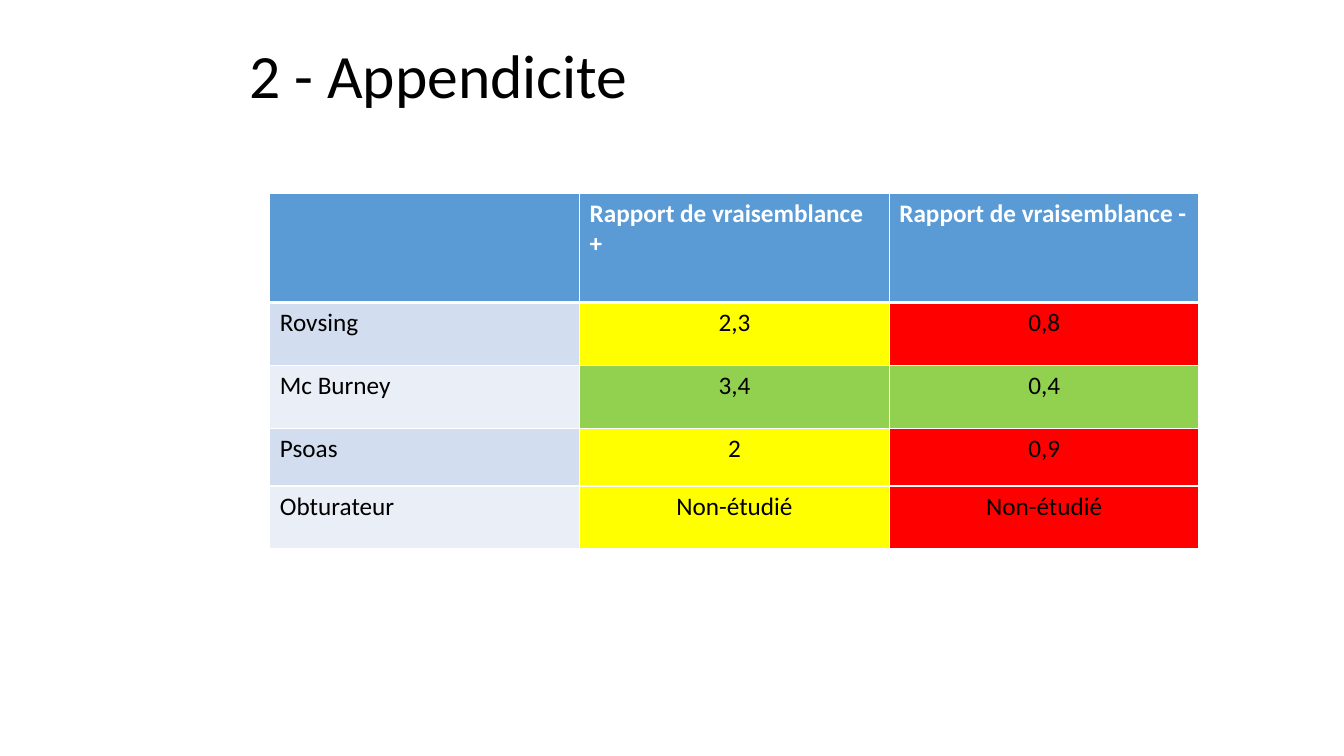
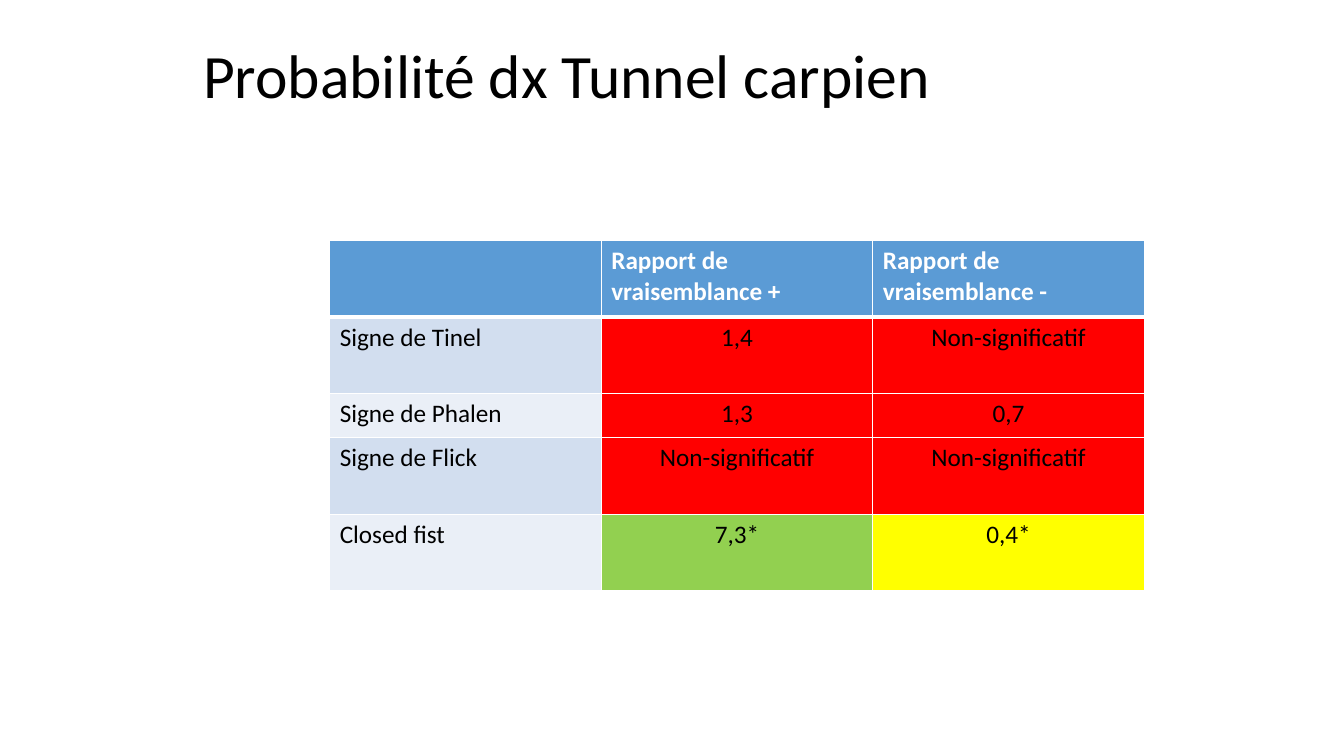
from dataclasses import dataclass

from lxml import etree
from pptx import Presentation
from pptx import util as u
from pptx.dml.color import RGBColor
from pptx.enum import text
from pptx.oxml.ns import qn

EMU_PER_PX = 9525
SLIDE_SIZE = (1280, 720)
TITLE_TOP, TITLE_RIGHT, TITLE_HEIGHT = 38, 1191, 139
FONT = "Calibri"
BLACK, WHITE = "000000", "FFFFFF"
HEADER_BLUE = "5B9BD5"
BANDS = ("D2DEEF", "EAEFF7")
GREEN, YELLOW, RED = "92D050", "FFFF00", "FF0000"
HEADINGS = ("", "Rapport de vraisemblance +", "Rapport de vraisemblance -")


@dataclass(frozen=True)
class Ratio:
    value: str
    color: str


@dataclass(frozen=True)
class Sign:
    name: str
    positive: Ratio
    negative: Ratio
    height: int


@dataclass(frozen=True)
class Topic:
    title: str
    title_left: int
    table_left: int
    table_top: int
    table_width: int
    header_height: int
    signs: tuple[Sign, ...]


TOPICS = (
    Topic("2 - Appendicite", 228, 257, 184, 885, 104, (
        Sign("Rovsing", Ratio("2,3", YELLOW), Ratio("0,8", RED), 60),
        Sign("Mc Burney", Ratio("3,4", GREEN), Ratio("0,4", GREEN), 60),
        Sign("Psoas", Ratio("2", YELLOW), Ratio("0,9", RED), 55),
        Sign("Obturateur", Ratio("Non-étudié", YELLOW), Ratio("Non-étudié", RED), 60),
    )),
    Topic("Probabilité dx Tunnel carpien", 184, 314, 229, 776, 73, (
        Sign("Signe de Tinel", Ratio("1,4", RED), Ratio("Non-significatif", RED), 73),
        Sign("Signe de Phalen", Ratio("1,3", RED), Ratio("0,7", RED), 42),
        Sign("Signe de Flick", Ratio("Non-significatif", RED),
             Ratio("Non-significatif", RED), 73),
        Sign("Closed fist", Ratio("7,3*", GREEN), Ratio("0,4*", YELLOW), 73),
    )),
)


def px(length: float) -> u.Emu:
    return u.Emu(round(length * EMU_PER_PX))


def rgb(color: str) -> RGBColor:
    return RGBColor.from_string(color)


def add_run(paragraph, words: str, size: int, color: str, bold: bool = False) -> None:
    run = paragraph.add_run()
    run.text = words
    run.font.name = FONT
    run.font.size = u.Pt(size)
    run.font.bold = bold
    run.font.color.rgb = rgb(color)


def add_title(slide, topic: Topic) -> None:
    box = slide.shapes.add_textbox(
        px(topic.title_left), px(TITLE_TOP),
        px(TITLE_RIGHT - topic.title_left), px(TITLE_HEIGHT))
    frame = box.text_frame
    frame.word_wrap = True
    frame.vertical_anchor = text.MSO_ANCHOR.TOP
    frame.paragraphs[0].line_spacing = 0.9
    add_run(frame.paragraphs[0], topic.title, 44, BLACK)


def add_borders(cell, top: int = 1, bottom: int = 1) -> None:
    """Draw white cell borders, with widths in points; call before filling."""
    properties = cell._tc.get_or_add_tcPr()
    for side, width in (("L", 1), ("R", 1), ("T", top), ("B", bottom)):
        line = etree.SubElement(properties, qn(f"a:ln{side}"), w=str(u.Pt(width)))
        fill = etree.SubElement(line, qn("a:solidFill"))
        etree.SubElement(fill, qn("a:srgbClr"), val=WHITE)


def fill_cell(cell, words: str, fill: str, color: str = BLACK,
              bold: bool = False, centered: bool = False) -> None:
    cell.fill.solid()
    cell.fill.fore_color.rgb = rgb(fill)
    paragraph = cell.text_frame.paragraphs[0]
    if centered:
        paragraph.alignment = text.PP_ALIGN.CENTER
    if words:
        add_run(paragraph, words, 18, color, bold)


def add_ratio_table(slide, topic: Topic) -> None:
    heights = [topic.header_height, *(sign.height for sign in topic.signs)]
    table = slide.shapes.add_table(
        len(heights), len(HEADINGS), px(topic.table_left), px(topic.table_top),
        px(topic.table_width), px(sum(heights))).table
    table.first_row = table.horz_banding = False
    for column in table.columns:
        column.width = px(topic.table_width / len(HEADINGS))
    for row, height in zip(table.rows, heights):
        row.height = px(height)

    for column, heading in enumerate(HEADINGS):
        cell = table.cell(0, column)
        add_borders(cell, bottom=3)
        fill_cell(cell, heading, HEADER_BLUE, WHITE, bold=True)
    for index, sign in enumerate(topic.signs):
        cells = table.rows[index + 1].cells
        for cell in cells:
            add_borders(cell, top=3 if index == 0 else 1)
        fill_cell(cells[0], sign.name, BANDS[index % len(BANDS)])
        for column, ratio in enumerate((sign.positive, sign.negative), start=1):
            fill_cell(cells[column], ratio.value, ratio.color, centered=True)


def main() -> None:
    deck = Presentation()
    deck.slide_width, deck.slide_height = map(px, SLIDE_SIZE)
    for topic in TOPICS:
        slide = deck.slides.add_slide(deck.slide_layouts[6])
        add_title(slide, topic)
        add_ratio_table(slide, topic)
    deck.save("out.pptx")


if __name__ == "__main__":
    main()
